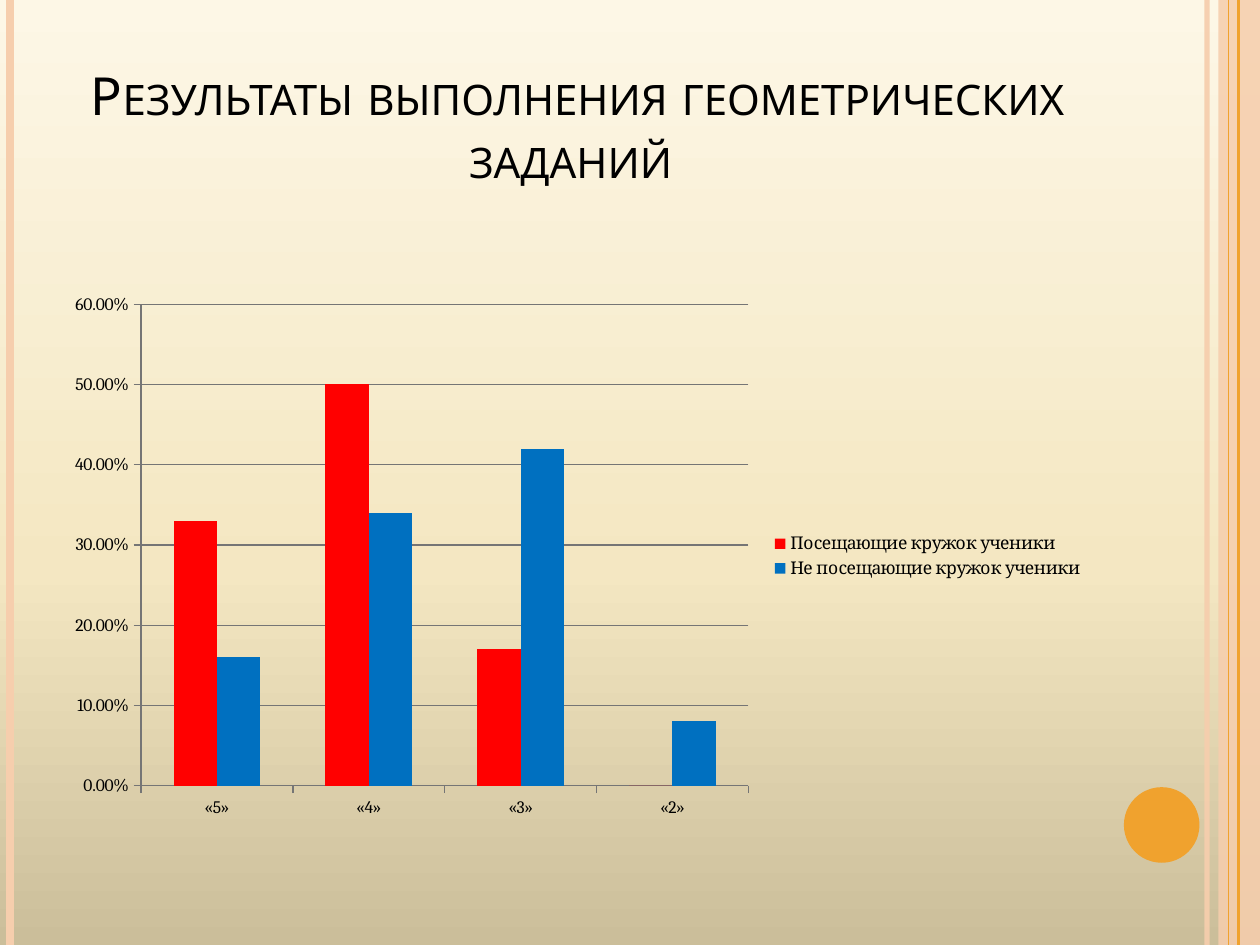
from copy import deepcopy
from dataclasses import dataclass

from pptx import Presentation
from pptx import util as u
from pptx.chart.data import CategoryChartData
from pptx.dml.color import RGBColor
from pptx.enum import chart as ch, shapes, text
from pptx.oxml.ns import qn
from pptx.oxml.xmlchemy import OxmlElement

WIDE, HIGH = u.Inches(10), u.Inches(7.5)
HUES = {
    "peach": "F6CEAD", "amber": "F0A22E", "ink": "000000", "grid": "757575",
    "red": "FF0000", "blue": "0070C0",
    "sand": "CBBE9A", "cream": "F4E7C2", "ivory": "FDF7E6",
}


@dataclass
class Stripe:
    left: float  # share of the slide's width
    hue: str
    points: float
    alpha: int = 100


@dataclass
class Group:
    name: str
    hue: str
    marks: tuple


STRIPES = [
    Stripe(0.958, "peach", 3, 93),
    Stripe(0.008, "peach", 4.5),
    Stripe(0.983, "amber", 1.5),
    Stripe(0.975, "amber", 0.75),
]
GRADES = ["«5»", "«4»", "«3»", "«2»"]
GROUPS = [
    Group("Посещающие кружок ученики", "red", (0.33, 0.5, 0.17, 0)),
    Group("Не посещающие кружок ученики", "blue", (0.16, 0.34, 0.42, 0.08)),
]


def rgb(hue: str) -> RGBColor:
    return RGBColor.from_string(HUES[hue])


def box(left: float, top: float, width: float, height: float) -> tuple:
    """Turn shares of the slide into lengths."""
    return (int(left * WIDE), int(top * HIGH),
            int(width * WIDE), int(height * HIGH))


def fade(shape, alpha: int) -> None:
    """Make the shape's colour partly transparent."""
    if alpha < 100:
        tone = next(shape._element.spPr.iter(qn("a:srgbClr")))
        node = OxmlElement("a:alpha")
        node.set("val", str(alpha * 1000))
        tone.append(node)


def draw_back(slide, stops: list) -> None:
    fill = slide.background.fill
    fill.gradient()
    fill.gradient_angle = 90
    nodes = next(slide._element.iter(qn("a:gsLst")))
    nodes.append(deepcopy(nodes[0]))
    for stop, (place, hue) in zip(fill.gradient_stops, stops):
        stop.position = place
        stop.color.rgb = rgb(hue)


def draw_stripe(slide, item: Stripe) -> None:
    x = int(item.left * WIDE)
    line = slide.shapes.add_connector(
        shapes.MSO_CONNECTOR.STRAIGHT, x, 0, x, HIGH)
    line.line.color.rgb = rgb(item.hue)
    line.line.width = u.Pt(item.points)
    line._element.spPr.append(OxmlElement("a:effectLst"))
    fade(line, item.alpha)


def draw_shape(slide, kind, place: tuple, hue: str, alpha: int = 100) -> None:
    shape = slide.shapes.add_shape(kind, *place)
    shape.shadow.inherit = False
    shape.fill.solid()
    shape.fill.fore_color.rgb = rgb(hue)
    shape.line.fill.background()
    fade(shape, alpha)


def set_title(slide, words: str) -> None:
    title = slide.shapes.title
    title.left, title.top, title.width, title.height = box(
        0.05, 0.04, 0.817, 0.167)
    frame = title.text_frame
    frame.text = words
    frame.word_wrap = True
    frame.auto_size = text.MSO_AUTO_SIZE.NONE
    frame.vertical_anchor = text.MSO_ANCHOR.BOTTOM
    para = frame.paragraphs[0]
    para.alignment = text.PP_ALIGN.CENTER
    run = para.runs[0]
    run.font.size = u.Pt(30)
    run.font.name = "Comic Neue"
    run.font.color.rgb = rgb("ink")
    run._r.get_or_add_rPr().set("cap", "small")


def draw_chart(slide, groups: list) -> None:
    data = CategoryChartData(number_format="0.00%")
    data.categories = GRADES
    for group in groups:
        data.add_series(group.name, group.marks)
    chart = slide.shapes.add_chart(
        ch.XL_CHART_TYPE.COLUMN_CLUSTERED,
        *box(0.043, 0.3, 0.827, 0.577), data).chart
    chart.has_title = False
    chart.font.name = "Cambria"
    chart.font.size = u.Pt(10)
    chart.font.color.rgb = rgb("ink")

    # Columns
    plot = chart.plots[0]
    plot.vary_by_categories = False
    plot.gap_width = 150
    plot.overlap = 0
    for series, group in zip(plot.series, groups):
        series.format.fill.solid()
        series.format.fill.fore_color.rgb = rgb(group.hue)

    # Axes and grid
    rise = chart.value_axis
    rise.minimum_scale, rise.maximum_scale, rise.major_unit = 0, 0.6, 0.1
    rise.tick_labels.number_format = "0.00%"
    rise.tick_labels.number_format_is_linked = False
    rise.has_major_gridlines = True
    for part in (rise, chart.category_axis, rise.major_gridlines):
        part.format.line.color.rgb = rgb("grid")
        part.format.line.width = u.Pt(0.75)
    for axis in (rise, chart.category_axis):
        axis.major_tick_mark = ch.XL_TICK_MARK.OUTSIDE

    # Legend
    chart.has_legend = True
    chart.legend.position = ch.XL_LEGEND_POSITION.RIGHT
    chart.legend.include_in_layout = False


def main() -> None:
    deck = Presentation()
    deck.slide_width, deck.slide_height = WIDE, HIGH
    slide = deck.slides.add_slide(deck.slide_layouts[5])

    # Background and side decoration
    draw_back(slide, [(0, "sand"), (0.4, "cream"), (1, "ivory")])
    draw_shape(slide, shapes.MSO_SHAPE.RECTANGLE,
               box(0.967, 0, 0.033, 1), "peach", 87)
    for item in STRIPES:
        draw_stripe(slide, item)
    draw_shape(slide, shapes.MSO_SHAPE.OVAL,
               box(0.892, 0.833, 0.06, 0.08), "amber")

    # Content
    set_title(slide, "Результаты выполнения геометрических заданий ")
    draw_chart(slide, GROUPS)
    deck.save("out.pptx")


if __name__ == "__main__":
    main()
